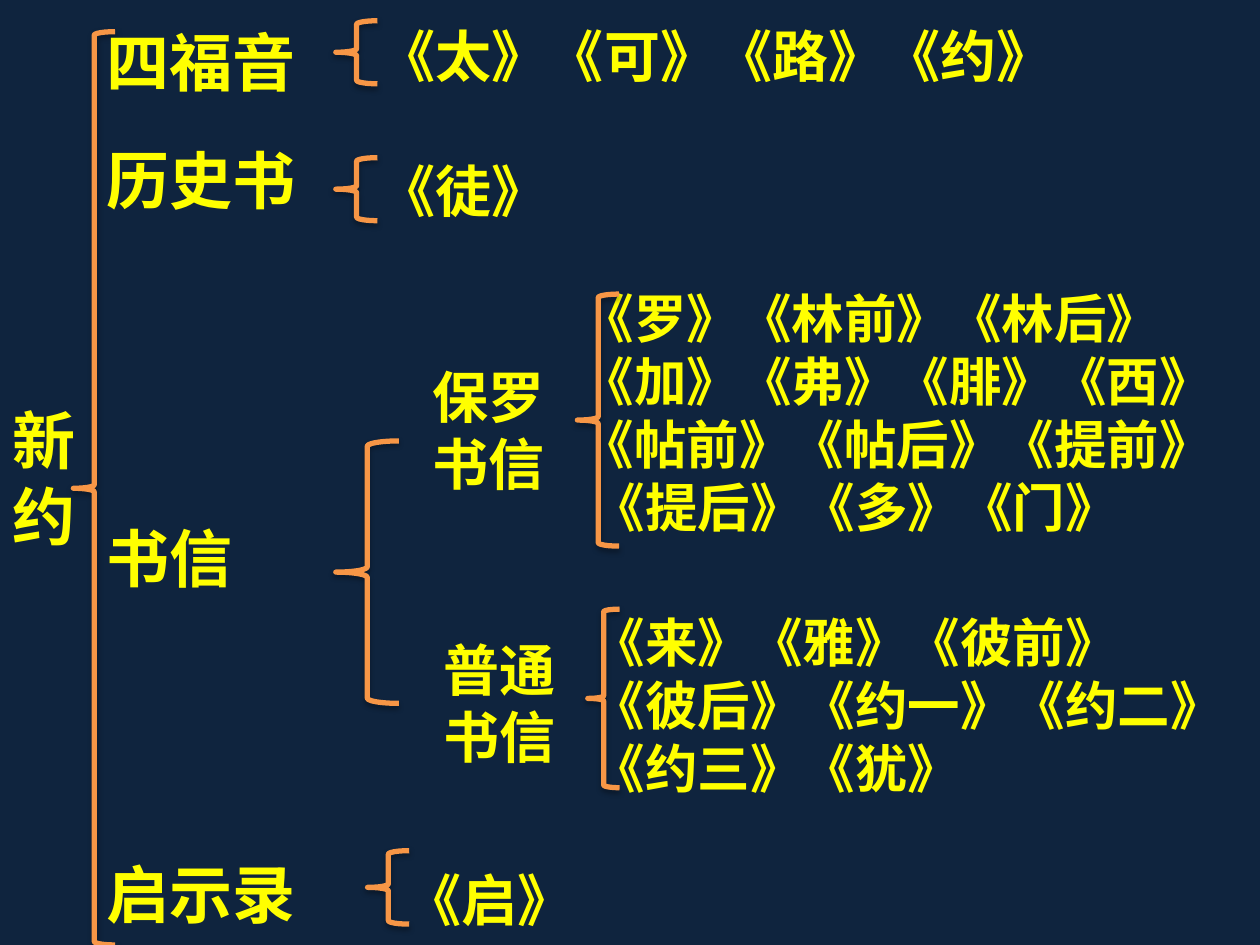
from dataclasses import dataclass

from lxml import etree
from pptx import Presentation
from pptx.dml.color import RGBColor
from pptx.enum.shapes import MSO_SHAPE
from pptx.enum.text import MSO_ANCHOR, MSO_AUTO_SIZE
from pptx.oxml import parse_xml
from pptx.oxml.ns import nsdecls, qn
from pptx.util import Cm, Pt

LEFT_BRACE = MSO_SHAPE.LEFT_BRACE
MIDDLE = MSO_ANCHOR.MIDDLE
FIXED_SIZE = MSO_AUTO_SIZE.NONE


@dataclass(frozen=True)
class Theme:
    background: RGBColor = RGBColor(0x0F, 0x24, 0x3E)
    lettering: RGBColor = RGBColor(0xFF, 0xFF, 0x00)
    brace: RGBColor = RGBColor(0xF7, 0x96, 0x46)
    font: str = "Noto Sans CJK SC"
    heading: int = 36
    entry: int = 32
    epistle: int = 30
    leading: float = 1.2
    brace_width: int = 3


THEME = Theme()
FRAME_FORMAT = {
    "word_wrap": True,
    "auto_size": FIXED_SIZE,
    "vertical_anchor": MIDDLE,
    "margin_top": Cm(0.2),
    "margin_bottom": 0,
}
SHADOW = (
    f'<a:outerShdw {nsdecls("a")} blurRad="40000" dist="23000" dir="5400000" '
    'rotWithShape="0"><a:srgbClr val="000000"><a:alpha val="35000"/>'
    "</a:srgbClr></a:outerShdw>"
)


@dataclass(frozen=True)
class Line:
    text: str
    size: int
    gap: float = 0
    indent: float = 0


def apply_format(target, values):
    for name, value in values.items():
        setattr(target, name, value)


def place(box, left, top, width, height):
    return box[0] + left, box[1] + top, width, height


def write_lines(slide, box, lines):
    frame = slide.shapes.add_textbox(*map(Cm, box)).text_frame
    apply_format(frame, FRAME_FORMAT)
    for index, line in enumerate(lines):
        paragraph = frame.paragraphs[0] if index == 0 else frame.add_paragraph()
        apply_format(paragraph, {
            "line_spacing": Pt(line.size * THEME.leading),
            "space_before": Pt(line.gap),
        })
        paragraph._p.get_or_add_pPr().set("marL", str(Cm(line.indent)))
        run = paragraph.add_run()
        run.text = line.text
        apply_format(run.font, {
            "name": THEME.font, "size": Pt(line.size), "bold": True,
        })
        run.font.color.rgb = THEME.lettering
        east_asian = etree.SubElement(run._r.get_or_add_rPr(), qn("a:ea"))
        east_asian.set("typeface", THEME.font)


def draw_brace(slide, box):
    brace = slide.shapes.add_shape(LEFT_BRACE, *map(Cm, box))
    brace.fill.background()
    brace.line.color.rgb = THEME.brace
    brace.line.width = Pt(THEME.brace_width)
    brace.shadow.inherit = False
    brace._element.spPr.find(qn("a:effectLst")).append(parse_xml(SHADOW))


def testament(slide, box):
    write_lines(slide, place(box, 0, 0, 2.12, box[3]), [Line("新约", THEME.heading)])
    draw_brace(slide, place(box, 1.48, 0.64, 0.84, 18.41))


def divisions(slide, box):
    names_and_gaps = [("四福音", 0), ("历史书", 24), ("书信", 172.8), ("启示录", 148.8)]
    write_lines(slide, place(box, 0, 0, 5.93, box[3]), [
        Line(name, THEME.heading, gap) for name, gap in names_and_gaps
    ])
    for left, top, width, height in [
        (4.87, 0.42, 0.84, 1.27),
        (4.87, 3.18, 0.84, 1.27),
        (4.87, 8.89, 1.27, 5.29),
        (5.51, 17.15, 0.84, 1.48),
    ]:
        draw_brace(slide, place(box, left, top, width, height))


def books(slide, box):
    entry, epistle = THEME.entry, THEME.epistle
    near, far = 4.07, 4.29
    write_lines(slide, box, [
        Line("《太》《可》《路》《约》", entry),
        Line("《徒》", entry, 38.4),
        Line("《罗》《林前》《林后》", epistle, 36, near),
        Line("《加》《弗》《腓》《西》", epistle, 0, near),
        Line("《帖前》《帖后》《提前》", epistle, 0, near),
        Line("《提后》《多》《门》", epistle, 0, far),
        Line("《来》《雅》《彼前》", epistle, 40.8, far),
        Line("《彼后》《约一》《约二》", epistle, 0, far),
        Line("《约三》《犹》", epistle, 0, far),
        Line("《启》", entry, 38.4, 0.52),
    ])


def letters(slide, box):
    for names, label, brace in [
        (["保罗书信"], (0, 0, 3.18, 4.02), (3.17, -0.62, 0.84, 5.08)),
        (["普通", "书信"], (0.22, 6.15, 3.18, 2.74), (3.38, 5.73, 0.64, 3.6)),
    ]:
        write_lines(slide, place(box, *label), [Line(name, THEME.entry) for name in names])
        draw_brace(slide, place(box, *brace))


def main():
    deck = Presentation()
    apply_format(deck, {"slide_width": Cm(25.4), "slide_height": Cm(19.05)})
    slide = deck.slides.add_slide(deck.slide_layouts[6])
    slide.background.fill.solid()
    slide.background.fill.fore_color.rgb = THEME.background
    testament(slide, (0, 0, 2.32, 19.05))
    divisions(slide, (1.9, 0, 6.35, 19.05))
    books(slide, (7.41, 0, 17.78, 19.05))
    letters(slide, (8.47, 6.55, 4.02, 9.33))
    deck.save("out.pptx")


if __name__ == "__main__":
    main()
